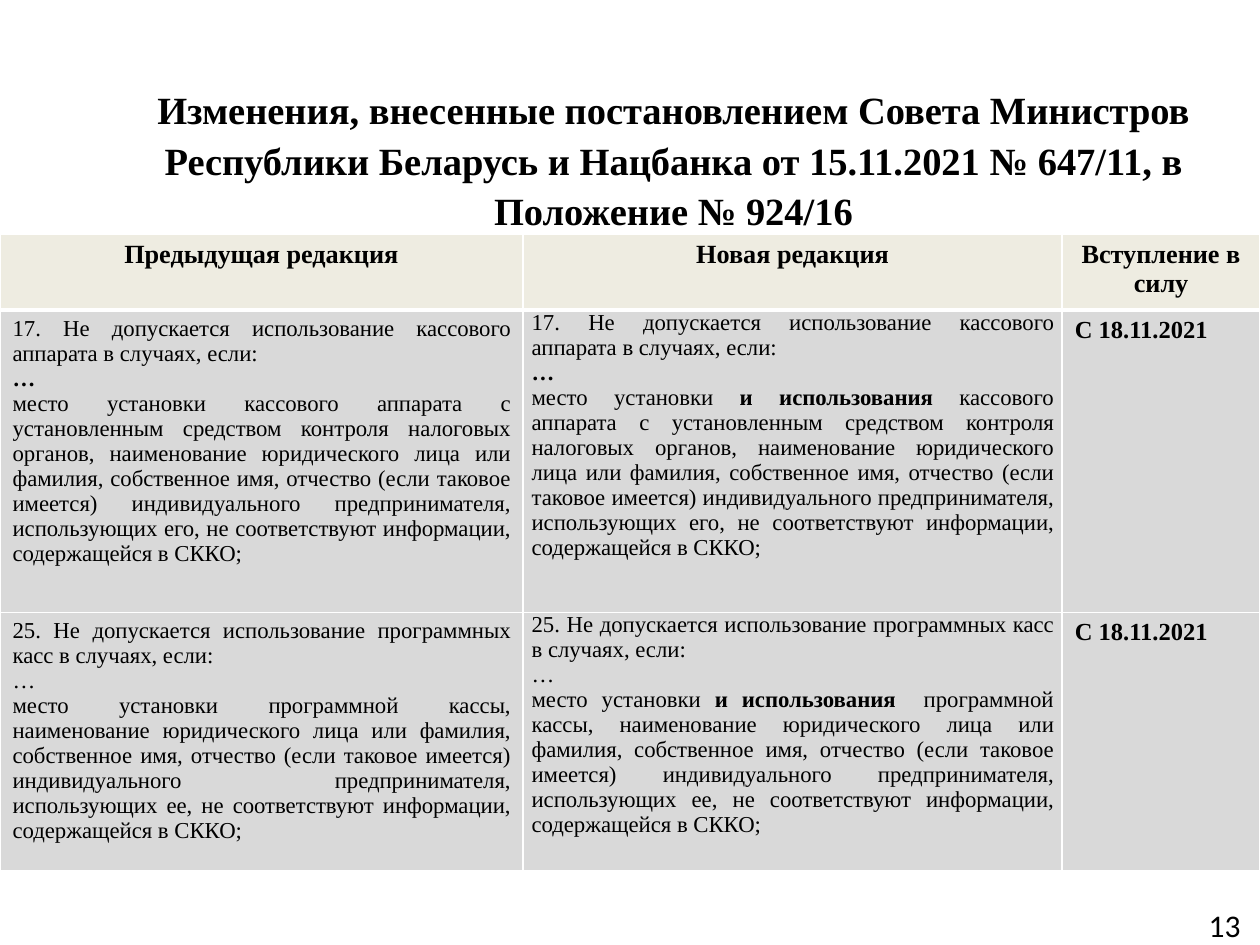
from dataclasses import dataclass

from lxml.etree import SubElement
from pptx import Presentation
from pptx.dml.color import RGBColor
from pptx.enum.text import MSO_ANCHOR, MSO_AUTO_SIZE, PP_ALIGN
from pptx.oxml.ns import qn
from pptx.util import Pt

SERIF = "Times New Roman"
BLACK, WHITE, CREAM, GRAY = "000000", "FFFFFF", "EEECE1", "D9D9D9"
COLUMN_WIDTHS = (298.8, 308.2, 113)
ROW_HEIGHTS = (41.8, 172.8, 142.6)
TABLE_TOP = 133.9


@dataclass(frozen=True)
class Piece:
    text: str
    bold: bool = False


@dataclass(frozen=True)
class CellContent:
    paragraphs: tuple[tuple[Piece, ...], ...]
    size: float = 13
    alignment: PP_ALIGN = PP_ALIGN.JUSTIFY
    fill: str = GRAY
    tight: bool = False


def color(value: str) -> RGBColor:
    return RGBColor.from_string(value)


def format_font(font, name: str, size: float, bold: bool = False) -> None:
    font.name = name
    font.size = Pt(size)
    font.bold = bold
    font.color.rgb = color(BLACK)


def set_borders(cell, widths: dict[str, float]) -> None:
    """Put white lines on the sides of a cell, before its fill is set."""
    properties = cell._tc.get_or_add_tcPr()
    for side, width in widths.items():
        line = SubElement(properties, qn(f"a:{side}"), w=str(Pt(width)))
        fill = SubElement(line, qn("a:solidFill"))
        SubElement(fill, qn("a:srgbClr"), val=WHITE)


def fill_cell(cell, content: CellContent, row: int) -> None:
    set_borders(cell, {"lnL": 1, "lnR": 1,
                       "lnT": 3 if row == 1 else 1,
                       "lnB": 3 if row == 0 else 1})
    cell.fill.solid()
    cell.fill.fore_color.rgb = color(content.fill)
    if content.tight:
        cell.margin_left = cell.margin_right = Pt(5)
        cell.margin_top = cell.margin_bottom = Pt(0)
    text_frame = cell.text_frame
    text_frame.text = "\n".join(
        "" if len(pieces) > 1 else pieces[0].text for pieces in content.paragraphs)
    for paragraph, pieces in zip(text_frame.paragraphs, content.paragraphs):
        paragraph.alignment = content.alignment
        if len(pieces) > 1:
            for piece in pieces:
                paragraph.add_run().text = piece.text
        for run, piece in zip(paragraph.runs, pieces):
            format_font(run.font, SERIF, content.size, piece.bold)


def header(text: str) -> CellContent:
    return CellContent(((Piece(text, True),),), 15, PP_ALIGN.CENTER, CREAM)


def clause_row(opening: str, subject: str, addition: str, ending: str,
               bold_dots: bool) -> tuple[CellContent, ...]:
    """Return the old wording, the new wording and the date of one clause."""
    start = ((Piece(opening),), (Piece("…", bold_dots),))
    place = "место установки "
    old = (Piece(place + subject.lstrip() + ending),)
    new = (Piece(place), Piece(addition, True), Piece(subject + ending))
    return (CellContent(start + (old,)),
            CellContent(start + (new,), tight=True),
            CellContent(((Piece("С 18.11.2021", True),),), 14))


OWNER = ("наименование юридического лица или фамилия, собственное имя, отчество "
         "(если таковое имеется) индивидуального предпринимателя, использующих ")
MISMATCH = ", не соответствуют информации, содержащейся в СККО;"
ROWS = (
    tuple(map(header, ("Предыдущая редакция", "Новая редакция", "Вступление в силу"))),
    clause_row("17. Не допускается использование кассового аппарата в случаях, если:",
               " кассового аппарата с установленным средством контроля налоговых органов, ",
               "и использования", OWNER + "его" + MISMATCH, True),
    clause_row("25. Не допускается использование программных касс в случаях, если:",
               "программной кассы, ", "и использования  ",
               OWNER + "ее" + MISMATCH, False),
)


def add_title(slide) -> None:
    title = slide.shapes.title
    title.left, title.top, title.width, title.height = (
        Pt(49.7), Pt(51.8), Pt(670.3), Pt(76.3))
    text_frame = title.text_frame
    text_frame.auto_size = MSO_AUTO_SIZE.NONE
    text_frame.vertical_anchor = MSO_ANCHOR.MIDDLE
    text_frame.text = ("Изменения, внесенные постановлением Совета Министров "
                       "Республики Беларусь и Нацбанка от 15.11.2021 № 647/11, "
                       "в Положение № 924/16")
    paragraph = text_frame.paragraphs[0]
    paragraph.alignment = PP_ALIGN.CENTER
    paragraph.line_spacing = 1.1
    format_font(paragraph.runs[0].font, SERIF, 22, True)


def add_page_number(slide) -> None:
    box = slide.shapes.add_textbox(Pt(679.7), Pt(517), Pt(40.3), Pt(23))
    text_frame = box.text_frame
    text_frame.word_wrap = True
    text_frame.vertical_anchor = MSO_ANCHOR.MIDDLE
    text_frame.text = "13"
    paragraph = text_frame.paragraphs[0]
    paragraph.alignment = PP_ALIGN.CENTER
    format_font(paragraph.runs[0].font, "Calibri", 18)


def add_comparison_table(slide) -> None:
    table = slide.shapes.add_table(
        len(ROWS), len(COLUMN_WIDTHS), Pt(0), Pt(TABLE_TOP),
        Pt(sum(COLUMN_WIDTHS)), Pt(sum(ROW_HEIGHTS))).table
    for column, width in zip(table.columns, COLUMN_WIDTHS):
        column.width = Pt(width)
    for row_index, (height, contents) in enumerate(zip(ROW_HEIGHTS, ROWS)):
        table.rows[row_index].height = Pt(height)
        for column_index, content in enumerate(contents):
            fill_cell(table.cell(row_index, column_index), content, row_index)


def main() -> None:
    presentation = Presentation()
    presentation.slide_width, presentation.slide_height = Pt(720), Pt(540)
    slide = presentation.slides.add_slide(presentation.slide_layouts[5])
    add_title(slide)
    add_page_number(slide)
    add_comparison_table(slide)
    presentation.save("out.pptx")


if __name__ == "__main__":
    main()
